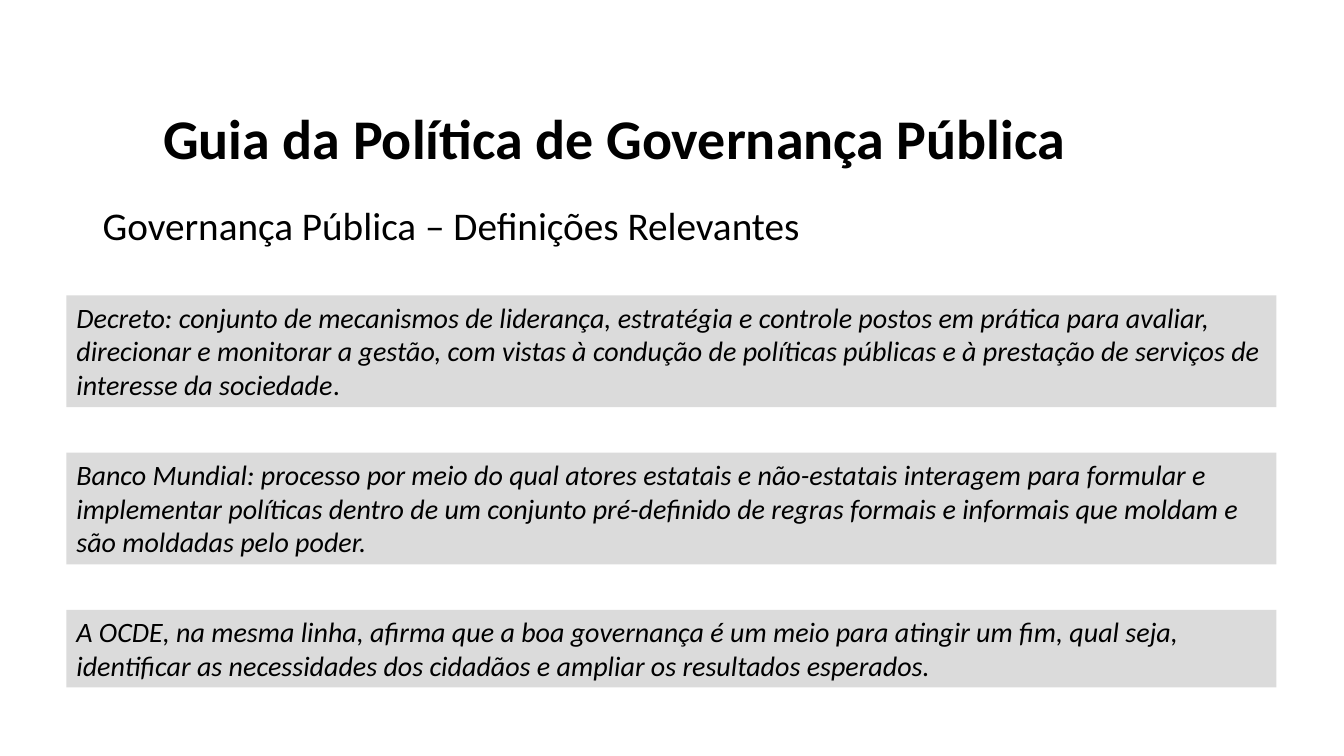
from pptx import Presentation
from pptx.dml.color import RGBColor
from pptx.enum.shapes import MSO_SHAPE
from pptx.enum.text import MSO_ANCHOR, MSO_AUTO_SIZE, PP_ALIGN
from pptx.util import Inches, Pt


def color(value):
    return RGBColor.from_string(value)


def write(tf, *parts, size=20, bold=False, italic=False, spacing=1.0, inset=0.05):
    """Fill a frame with one paragraph; each part after the first is upright."""
    tf.word_wrap = True
    tf.vertical_anchor = MSO_ANCHOR.TOP
    tf.margin_top = Inches(inset)
    p = tf.paragraphs[0]
    p.alignment = PP_ALIGN.LEFT
    p.line_spacing = spacing
    for i, text in enumerate(parts):
        r = p.add_run()
        r.text = text
        r.font.name = SlideBuilder.FONT
        r.font.size = Pt(size)
        r.font.bold = bold
        r.font.italic = italic and i == 0
        r.font.color.rgb = color(SlideBuilder.INK)


class SlideBuilder:
    FONT = "Calibri"
    INK = "000000"
    PANEL = "DBDBDB"

    def __init__(self, prs):
        self.s = prs.slides.add_slide(prs.slide_layouts[6])

    def text(self, left, top, width, height, *parts, **fmt):
        sp = self.s.shapes.add_textbox(
            Inches(left), Inches(top), Inches(width), Inches(height))
        write(sp.text_frame, *parts, **fmt)

    def panel(self, left, top, width, height, *parts, **fmt):
        sp = self.s.shapes.add_shape(
            MSO_SHAPE.RECTANGLE,
            Inches(left), Inches(top), Inches(width), Inches(height))
        sp.shadow.inherit = False
        sp.fill.solid()
        sp.fill.fore_color.rgb = color(self.PANEL)
        sp.line.fill.background()
        write(sp.text_frame, *parts, **fmt)
        sp.text_frame.auto_size = MSO_AUTO_SIZE.SHAPE_TO_FIT_TEXT


# Height and text of each definition
DEFINITIONS = [
    (1.11, ["Decreto: conjunto de mecanismos de liderança, estratégia e controle "
            "postos em prática para avaliar, direcionar e monitorar a gestão, com "
            "vistas à condução de políticas públicas e à prestação de serviços de "
            "interesse da sociedade", "."]),
    (1.11, ["Banco Mundial: processo por meio do qual atores estatais e "
            "não-estatais interagem para formular e implementar políticas dentro "
            "de um conjunto pré-definido de regras formais e informais que moldam "
            "e são moldadas pelo poder."]),
    (0.77, ["A OCDE, na mesma linha, afirma que a boa governança é um meio para "
            "atingir um fim, qual seja, identificar as necessidades dos cidadãos "
            "e ampliar os resultados esperados."]),
]


def main():
    prs = Presentation()
    prs.slide_width, prs.slide_height = Inches(13.33), Inches(7.5)
    slide = SlideBuilder(prs)

    # Subtitle and title
    slide.text(0.92, 2, 11.5, 4.76, "Governança Pública – Definições Relevantes",
               size=28, spacing=0.9)
    slide.text(1.52, 0.99, 11.5, 1.45, "Guia da Política de Governança Pública",
               size=40, bold=True, spacing=0.9, inset=0.11)

    # Definitions, evenly stacked
    top, gap = 2.93, 0.45
    for height, parts in DEFINITIONS:
        slide.panel(0.66, top, 12, height, *parts, italic=True)
        top += height + gap

    prs.save("out.pptx")


if __name__ == "__main__":
    main()
